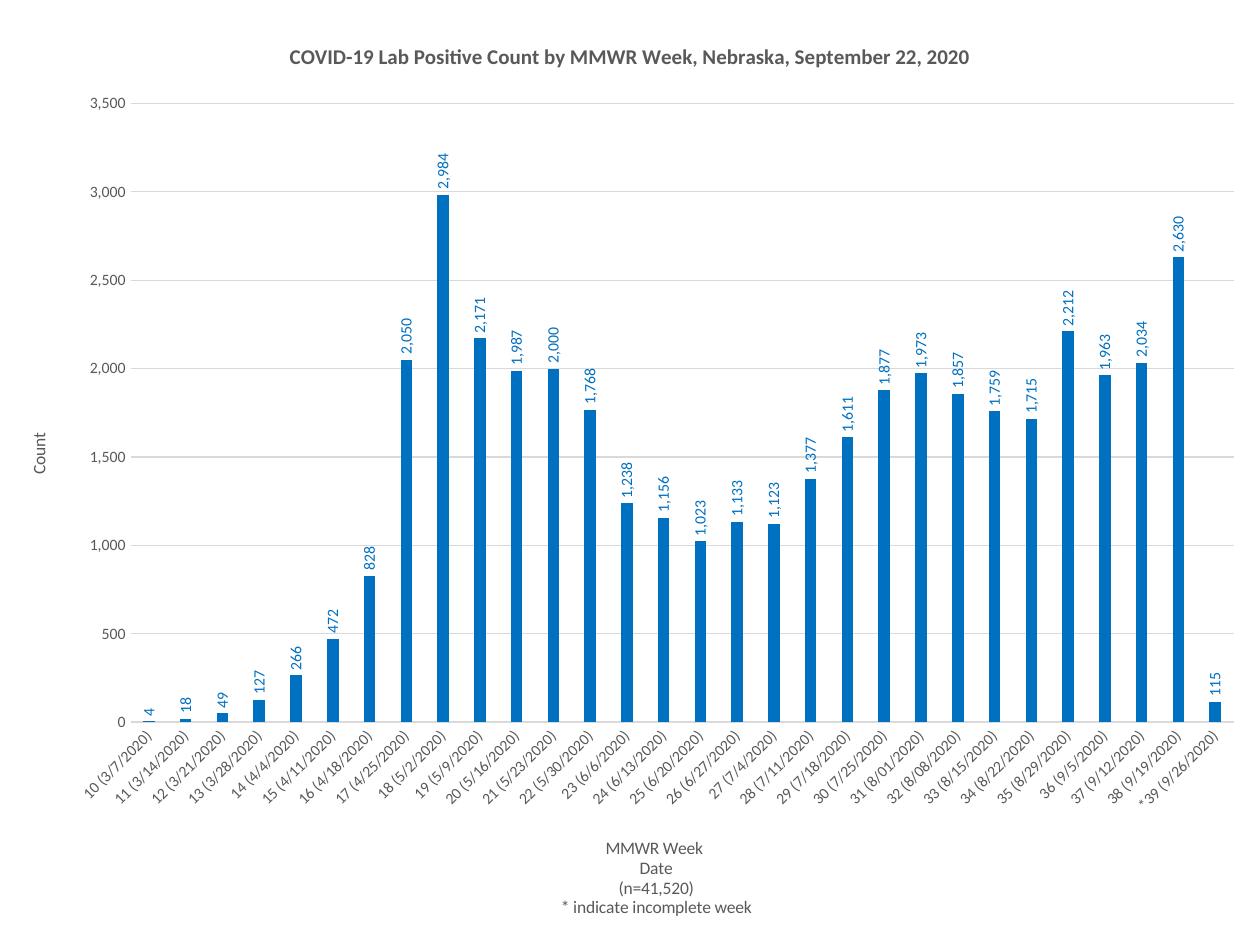
from typing import NamedTuple, Optional

from lxml.etree import SubElement
from pptx import Presentation
from pptx.chart.data import CategoryChartData
from pptx.dml.color import RGBColor
from pptx.enum.chart import XL_CHART_TYPE, XL_LABEL_POSITION, XL_TICK_MARK
from pptx.oxml.ns import qn
from pptx.util import Inches, Pt

GREY, PALE, BLUE = "595959", "D9D9D9", "0070C0"
WIDTH, HEIGHT = Inches(10), Inches(7.5)
FIRST_WEEK = 10
NUMBER_FORMAT = "#,##0"


class Week(NamedTuple):
    ending: str
    count: int
    mark: str = ""


class Place(NamedTuple):
    """Position and size in percent of the chart."""
    x: float
    y: float
    w: Optional[float] = None
    h: Optional[float] = None


WEEKS = [
    Week("3/7", 4), Week("3/14", 18), Week("3/21", 49), Week("3/28", 127),
    Week("4/4", 266), Week("4/11", 472), Week("4/18", 828), Week("4/25", 2050),
    Week("5/2", 2984), Week("5/9", 2171), Week("5/16", 1987), Week("5/23", 2000),
    Week("5/30", 1768), Week("6/6", 1238), Week("6/13", 1156), Week("6/20", 1023),
    Week("6/27", 1133), Week("7/4", 1123), Week("7/11", 1377), Week("7/18", 1611),
    Week("7/25", 1877), Week("8/01", 1973), Week("8/08", 1857), Week("8/15", 1759),
    Week("8/22", 1715), Week("8/29", 2212), Week("9/5", 1963), Week("9/12", 2034),
    Week("9/19", 2630), Week("9/26", 115, "*"),
]


def color(value: str) -> RGBColor:
    return RGBColor.from_string(value)


def style_font(font, size: float, value: str = GREY, bold: bool = False) -> None:
    formats = {"name": "Calibri", "size": Pt(size), "bold": bold}
    for name, setting in formats.items():
        setattr(font, name, setting)
    font.color.rgb = color(value)


def style_line(line, value: str) -> None:
    line.color.rgb = color(value)
    line.width = Pt(0.75)


def rotate(element, degrees: int) -> None:
    body = next(element.iter(qn("a:bodyPr")))
    body.set("rot", str(degrees * 60000))
    body.set("vert", "horz")


def set_layout(parent, place: Place, after=None) -> None:
    """Give a chart part a manual layout."""
    for old in parent.findall(qn("c:layout")):
        parent.remove(old)
    layout = SubElement(parent, qn("c:layout"))
    if after is None:
        parent.insert(0, layout)
    else:
        after.addnext(layout)
    manual = SubElement(layout, qn("c:manualLayout"))
    settings = {"xMode": "edge", "yMode": "edge"}
    if place.w is not None:
        settings = {"layoutTarget": "inner", **settings}
    for name, share in place._asdict().items():
        if share is not None:
            settings[name] = f"{share / 100:.4f}"
    for name, setting in settings.items():
        SubElement(manual, qn(f"c:{name}")).set("val", setting)


def add_title(owner, lines: list[str], size: float, place: Place,
              bold: bool = False, degrees: int = 0) -> None:
    """Write the title of a chart or an axis."""
    title = owner.chart_title if hasattr(owner, "chart_title") else owner.axis_title
    frame = title.text_frame
    for number, line in enumerate(lines):
        para = frame.add_paragraph() if number else frame.paragraphs[0]
        span = para.add_run()
        span.text = line
        style_font(span.font, size, bold=bold)
    element = title._element
    rotate(element, degrees)
    set_layout(element, place, element.find(qn("c:tx")))


def style_axis(axis, degrees: int) -> None:
    axis.major_tick_mark = axis.minor_tick_mark = XL_TICK_MARK.NONE
    style_font(axis.tick_labels.font, 9)
    rotate(axis._element.find(qn("c:txPr")), degrees)


def add_count_chart(page) -> None:
    data = CategoryChartData(number_format=NUMBER_FORMAT)
    data.categories = [f"{week.mark}{number} ({week.ending}/2020)"
                       for number, week in enumerate(WEEKS, FIRST_WEEK)]
    data.add_series("Series 1", [week.count for week in WEEKS])
    chart = page.shapes.add_chart(
        XL_CHART_TYPE.COLUMN_CLUSTERED, Inches(0.01), Inches(0.1),
        Inches(9.97), Inches(7.4), data).chart
    chart.has_legend = False
    style_font(chart.font, 10, "000000")
    set_layout(chart._chartSpace.chart.plotArea, Place(10.3, 9.75, 87.8, 66.36))

    # Columns and their upright values
    plot = chart.plots[0]
    for name, setting in {"gap_width": 219, "overlap": -27,
                          "vary_by_categories": False,
                          "has_data_labels": True}.items():
        setattr(plot, name, setting)
    fill = plot.series[0].format.fill
    fill.solid()
    fill.fore_color.rgb = color(BLUE)
    labels = plot.data_labels
    for name, setting in {"show_value": True, "number_format": NUMBER_FORMAT,
                          "number_format_is_linked": False,
                          "position": XL_LABEL_POSITION.OUTSIDE_END}.items():
        setattr(labels, name, setting)
    style_font(labels.font, 9, BLUE)
    rotate(labels._element.find(qn("c:txPr")), -90)

    # Axes
    weeks, counts = chart.category_axis, chart.value_axis
    style_axis(weeks, -45)
    style_line(weeks.format.line, PALE)
    style_axis(counts, 0)
    counts.minimum_scale, counts.maximum_scale, counts.major_unit = 0, 3500, 500
    counts.tick_labels.number_format = NUMBER_FORMAT
    counts.tick_labels.number_format_is_linked = False
    counts.format.line.fill.background()
    style_line(counts.major_gridlines.format.line, PALE)

    # Titles
    add_title(chart, ["COVID-19 Lab Positive Count by MMWR Week, "
                      "Nebraska, September 22, 2020"],
              12, Place(22.66, 2.75), bold=True)
    add_title(weeks, ["MMWR Week ", "Date", "(n=41,520)",
                      "* indicate incomplete week"], 10, Place(44.25, 87.95))
    add_title(counts, ["Count"], 10, Place(1.84, 44.75), degrees=-90)


def main() -> None:
    deck = Presentation()
    deck.slide_width, deck.slide_height = WIDTH, HEIGHT
    page = deck.slides.add_slide(deck.slide_layouts[6])
    add_count_chart(page)
    deck.save("out.pptx")


if __name__ == "__main__":
    main()
